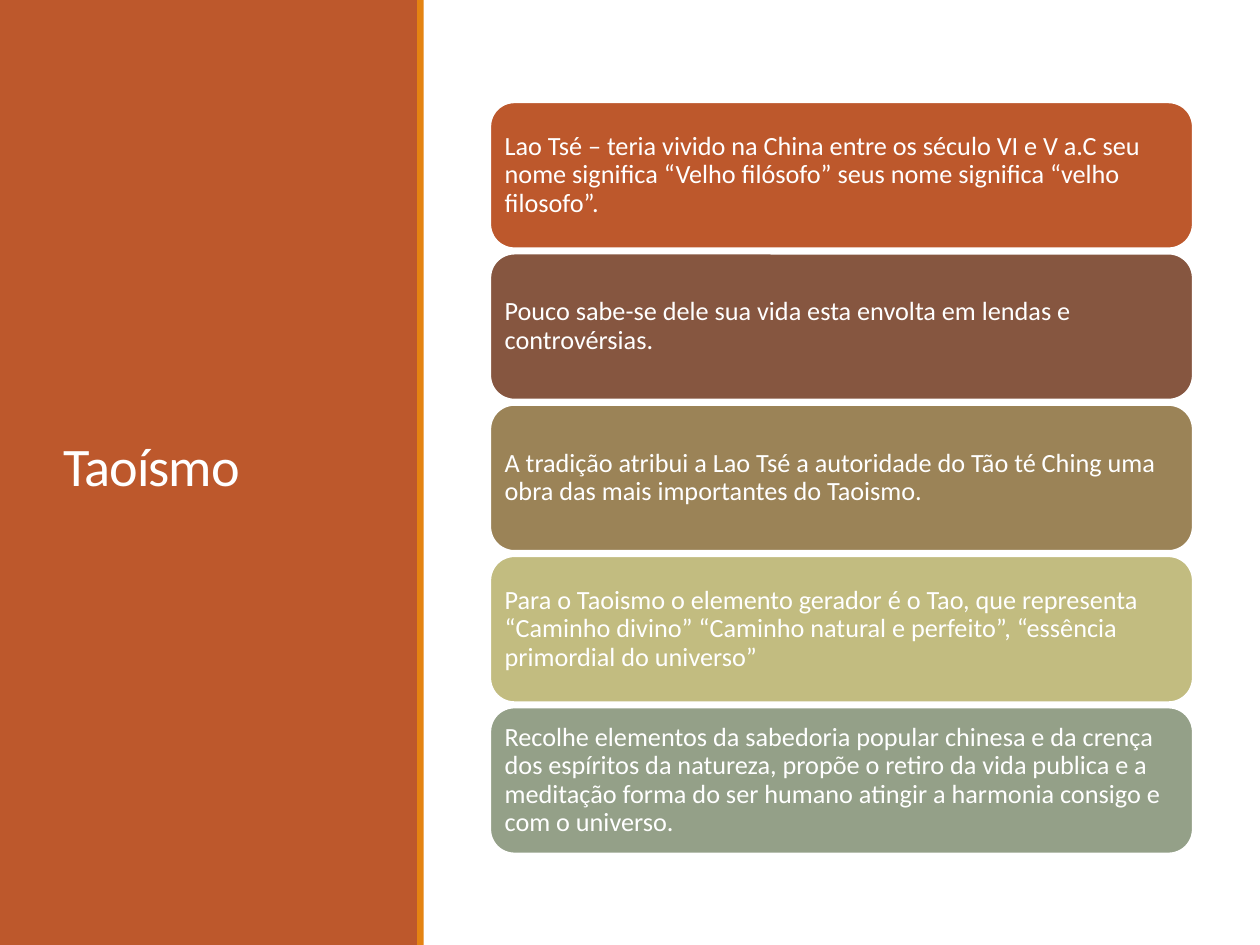
from pptx import Presentation
from pptx.dml.color import RGBColor
from pptx.enum.shapes import MSO_SHAPE
from pptx.enum.text import MSO_ANCHOR, MSO_AUTO_SIZE, PP_ALIGN
from pptx.util import Cm, Pt

COLOURS = {
    "white": "FFFFFF",
    "rust": "BD582C",
    "orange": "E48312",
    "brown": "865640",
    "ochre": "9B8357",
    "sand": "C2BC80",
    "sage": "94A088",
}

CARDS = [
    ("rust", "Lao Tsé – teria vivido na China entre os século VI e V a.C seu nome "
             "significa “Velho filósofo” seus nome significa “velho filosofo”."),
    ("brown", "Pouco sabe-se dele sua vida esta envolta em lendas e controvérsias."),
    ("ochre", "A tradição atribui a Lao Tsé a autoridade do Tão té Ching uma obra "
              "das mais importantes do Taoismo."),
    ("sand", "Para o Taoismo o elemento gerador é o Tao, que representa “Caminho divino” "
             "“Caminho natural e perfeito”, “essência primordial do universo”"),
    ("sage", "Recolhe elementos da sabedoria popular chinesa e da crença dos espíritos da "
             "natureza, propõe o retiro da vida publica e a meditação forma do ser humano "
             "atingir a harmonia consigo e com o universo."),
]


def set_all(target, values):
    """Set every attribute in values on target."""
    for name, value in values.items():
        setattr(target, name, value)


def colour(name):
    """Return the named colour."""
    return RGBColor.from_string(COLOURS[name])


def add_block(page, kind, box, fill, outline=None):
    """Add a filled shape in box, given in centimetres."""
    shape = page.shapes.add_shape(kind, *map(Cm, box))
    shape.shadow.inherit = False
    shape.fill.solid()
    shape.fill.fore_color.rgb = colour(fill)
    if outline:
        shape.line.color.rgb = colour(outline)
        shape.line.width = Pt(1.25)
    else:
        shape.line.fill.background()
    return shape


def write(shape, text, size, line_spacing, margins):
    """Write white, left-aligned, vertically centred text into shape."""
    frame = shape.text_frame
    frame.text = text
    set_all(frame, {
        "word_wrap": True,
        "auto_size": MSO_AUTO_SIZE.NONE,
        "vertical_anchor": MSO_ANCHOR.MIDDLE,
        "margin_left": Cm(margins[0]),
        "margin_right": Cm(margins[0]),
        "margin_top": Cm(margins[1]),
        "margin_bottom": Cm(margins[1]),
    })
    para = frame.paragraphs[0]
    set_all(para, {"alignment": PP_ALIGN.LEFT, "line_spacing": line_spacing})
    span = para.runs[0]
    set_all(span.font, {"name": "Calibri", "size": Pt(size), "bold": False})
    span.font.color.rgb = colour("white")
    return span


def build_title_panel(page, box, text):
    """Fill box with the rust panel, its orange edge and the title."""
    left, top, width, height = box
    add_block(page, MSO_SHAPE.RECTANGLE, box, "rust")
    add_block(page, MSO_SHAPE.RECTANGLE, (left + width - 0.02, top, 0.13, height), "orange")
    title = page.shapes.title
    set_all(title, {
        "left": Cm(left + 1.02),
        "top": Cm(top + 1.45),
        "width": Cm(width - 2),
        "height": Cm(height - 3.02),
    })
    span = write(title, text, 31, 0.85, (0.25, 0.13))
    span.font.element.set("spc", "-50") if hasattr(span.font, "element") else \
        span._r.get_or_add_rPr().set("spc", "-50")
    title.element.getparent().append(title.element)


def build_cards(page, box, cards, gap=0.1):
    """Stack equal rounded cards in box."""
    left, top, width, height = box
    card_height = (height - gap * (len(cards) - 1)) / len(cards)
    for index, (fill, text) in enumerate(cards):
        card_box = (left, top + index * (card_height + gap), width, card_height)
        card = add_block(page, MSO_SHAPE.ROUNDED_RECTANGLE, card_box, fill, "white")
        write(card, text, 15, 0.9, (0.15, 0.15))


def main():
    """Build and save the deck."""
    deck = Presentation()
    set_all(deck, {"slide_width": Cm(25.4), "slide_height": Cm(19.05)})
    page = deck.slides.add_slide(deck.slide_layouts[5])
    build_title_panel(page, (0, 0, 8.43, 19.05), "Taoísmo")
    build_cards(page, (9.88, 2.06, 14.17, 15.15), CARDS)
    deck.save("out.pptx")


if __name__ == "__main__":
    main()
